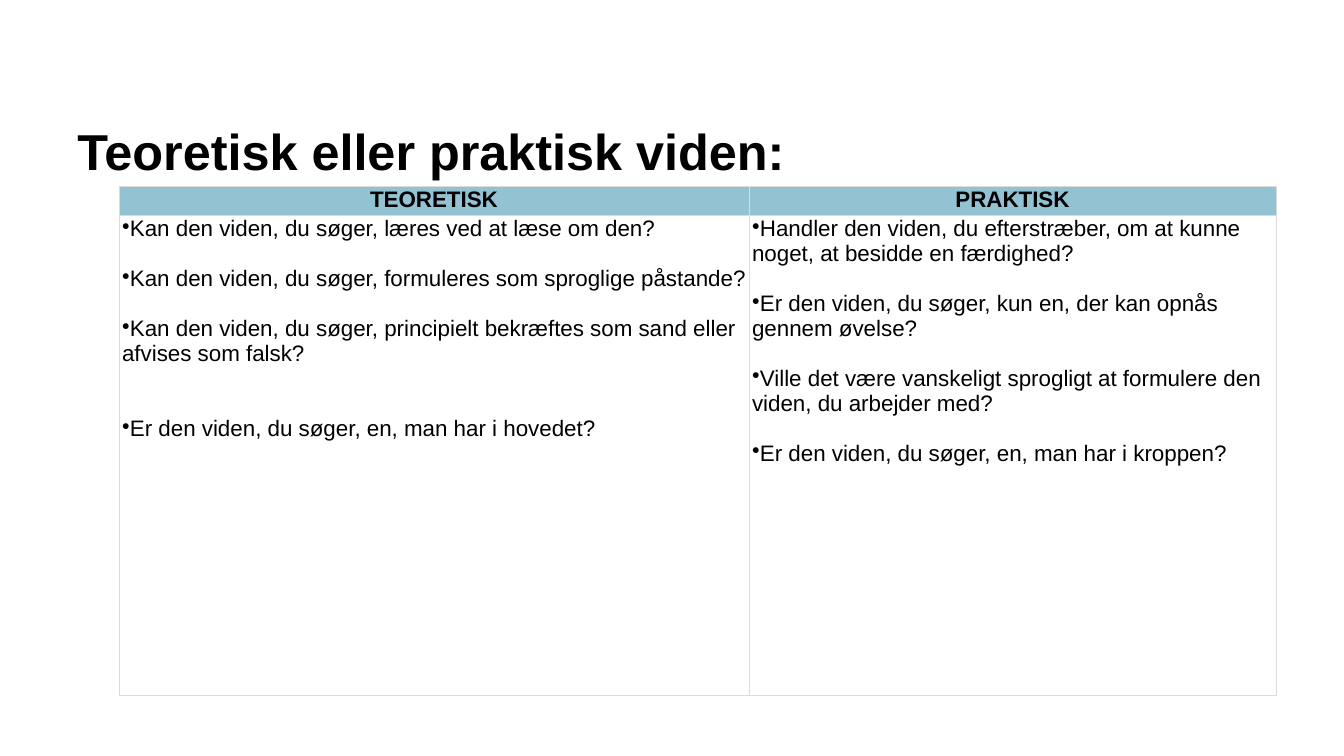
import pptx
import pptx.util
import pptx.dml.color
import pptx.enum.text
import pptx.oxml
import pptx.oxml.ns
from dataclasses import dataclass

Pt = pptx.util.Pt
Color = pptx.dml.color.RGBColor.from_string
Align = pptx.enum.text.PP_ALIGN
Anchor = pptx.enum.text.MSO_ANCHOR

TITLE = "Teoretisk eller praktisk viden:"
COLUMNS = [
    {
        "heading": "TEORETISK",
        "width": 450,
        "questions": [
            (0, "Kan den viden, du søger, læres ved at læse om den?"),
            (1, "Kan den viden, du søger, formuleres som sproglige påstande?"),
            (1, "Kan den viden, du søger, principielt bekræftes som sand eller afvises som falsk?"),
            (2, "Er den viden, du søger, en, man har i hovedet?"),
        ],
    },
    {
        "heading": "PRAKTISK",
        "width": 376.5,
        "questions": [
            (0, "Handler den viden, du efterstræber, om at kunne noget, at besidde en færdighed?"),
            (1, "Er den viden, du søger, kun en, der kan opnås gennem øvelse?"),
            (1, "Ville det være vanskeligt sprogligt at formulere den viden, du arbejder med?"),
            (1, "Er den viden, du søger, en, man har i kroppen?"),
        ],
    },
]


@dataclass(frozen=True)
class Theme:
    font: str = "Arial"
    ink: str = "000000"
    heading_fill: str = "93C2D3"
    border: str = "DBDBDB"
    title_size: float = 36
    table_size: float = 16
    question_gap: float = 18


THEME = Theme()
SLIDE_SIZE = (960, 540)
TITLE_BOX = (48.2, 49, 853.2, 84.2)
TABLE_LEFT, TABLE_TOP = 85, 133.2
ROW_HEIGHTS = (19.6, 342.6)


def add_text(para, text, size, bold=False):
    span = para.add_run()
    span.text = text
    span.font.name = THEME.font
    span.font.size = Pt(size)
    span.font.bold = bold
    span.font.color.rgb = Color(THEME.ink)


def add_xml(parent, tag, attributes, inner=""):
    namespace = pptx.oxml.ns.nsdecls("a")
    parent.append(pptx.oxml.parse_xml(f"<a:{tag} {namespace} {attributes}>{inner}</a:{tag}>"))


def add_bullet(para):
    properties = para._p.get_or_add_pPr()
    properties.set("marL", "0")
    properties.set("indent", "0")
    add_xml(properties, "buChar", 'char="•"')


def format_cell(cell):
    cell.margin_left = cell.margin_right = Pt(2.16)
    cell.margin_top = cell.margin_bottom = Pt(0.72)
    cell.vertical_anchor = Anchor.TOP
    line_fill = f'<a:solidFill><a:srgbClr val="{THEME.border}"/></a:solidFill>'
    for side in ("lnL", "lnR", "lnT", "lnB"):
        add_xml(cell._tc.get_or_add_tcPr(), side, f'w="{int(Pt(0.75))}"', line_fill)


def add_title(page):
    box = page.shapes.add_textbox(*map(Pt, TITLE_BOX))
    frame = box.text_frame
    frame.word_wrap = True
    frame.vertical_anchor = Anchor.BOTTOM
    frame.margin_left = Pt(7.2)
    frame.margin_right = frame.margin_top = 0
    frame.margin_bottom = Pt(3.6)
    para = frame.paragraphs[0]
    para.line_spacing = 0.9
    add_text(para, TITLE, THEME.title_size, bold=True)


def add_comparison(page):
    width = sum(column["width"] for column in COLUMNS)
    table = page.shapes.add_table(
        len(ROW_HEIGHTS), len(COLUMNS),
        Pt(TABLE_LEFT), Pt(TABLE_TOP), Pt(width), Pt(sum(ROW_HEIGHTS)),
    ).table
    table.horz_banding = False
    for row, height in zip(table.rows, ROW_HEIGHTS):
        row.height = Pt(height)
    for index, column in enumerate(COLUMNS):
        table.columns[index].width = Pt(column["width"])
        heading, body = table.cell(0, index), table.cell(1, index)
        format_cell(heading)
        heading.fill.solid()
        heading.fill.fore_color.rgb = Color(THEME.heading_fill)
        para = heading.text_frame.paragraphs[0]
        para.alignment = Align.CENTER
        add_text(para, column["heading"], THEME.table_size, bold=True)
        format_cell(body)
        body.fill.background()
        frame = body.text_frame
        for number, (gaps, question) in enumerate(column["questions"]):
            para = frame.add_paragraph() if number else frame.paragraphs[0]
            add_bullet(para)
            if gaps:
                para.space_before = Pt(gaps * THEME.question_gap)
            add_text(para, question, THEME.table_size)


def main():
    deck = pptx.Presentation()
    deck.slide_width, deck.slide_height = map(Pt, SLIDE_SIZE)
    page = deck.slides.add_slide(deck.slide_layouts[6])
    add_title(page)
    add_comparison(page)
    deck.save("out.pptx")


if __name__ == "__main__":
    main()
